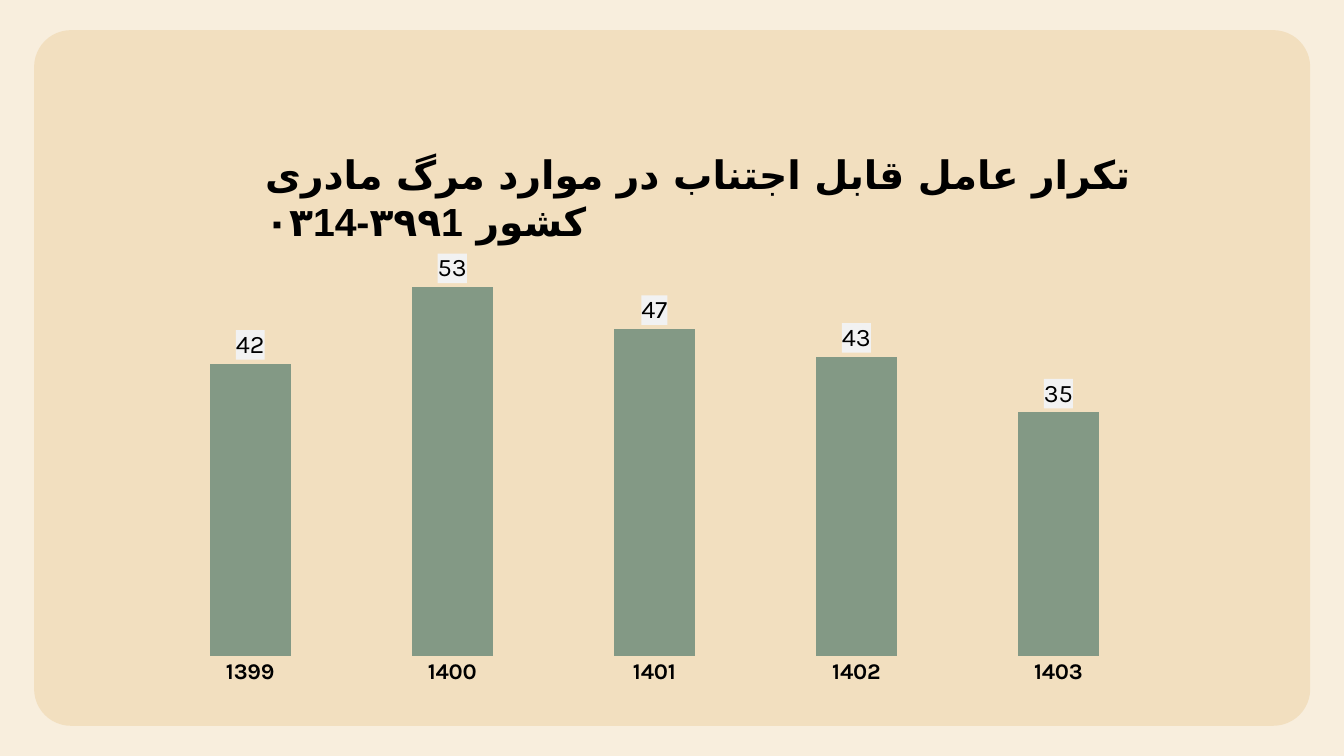
from lxml import etree
from pptx import Presentation
from pptx.chart.data import CategoryChartData
from pptx.dml.color import RGBColor
from pptx.enum.chart import XL_CHART_TYPE as ChartType, XL_LABEL_POSITION as LabelPos, XL_TICK_MARK as Tick
from pptx.enum.shapes import MSO_SHAPE as Shape
from pptx.enum.text import MSO_ANCHOR as Anchor, MSO_AUTO_SIZE as AutoSize, PP_ALIGN as Align
from pptx.oxml import parse_xml
from pptx.oxml.ns import nsdecls, qn
from pptx.util import Cm, Pt


def rgb(value):
    return RGBColor.from_string(value)


def style(font, name, size, bold):
    font.name = name
    font.size = Pt(size)
    font.bold = bold
    font.color.rgb = rgb("000000")


prs = Presentation()
prs.slide_width = Cm(33.87)
prs.slide_height = Cm(19.05)
s = prs.slides.add_slide(prs.slide_layouts[5])
s.background.fill.solid()
s.background.fill.fore_color.rgb = rgb("F8EEDD")

panel = s.shapes.add_shape(Shape.ROUNDED_RECTANGLE, Cm(0.86), Cm(0.76), Cm(32.16), Cm(17.53))
panel.adjustments[0] = 0.053
panel.shadow.inherit = False
panel.fill.solid()
panel.fill.fore_color.rgb = rgb("F2DFBF")
panel.line.fill.background()
s.shapes._spTree.insert(2, panel._element)

title = s.shapes.title
title.left, title.top, title.width, title.height = Cm(6.43), Cm(3.66), Cm(23.72), Cm(1.45)
tf = title.text_frame
tf.word_wrap = True
tf.auto_size = AutoSize.SHAPE_TO_FIT_TEXT
tf.vertical_anchor = Anchor.TOP
p = tf.paragraphs[0]
p.alignment = Align.LEFT
for text, script_font in [
    ("تکرار عامل قابل اجتناب در موارد مرگ مادری کشور ", "DejaVu Sans"),
    ("1", "Arial"),
    ("۳۹۹", "DejaVu Sans"),
    ("-14", "Arial"),
    ("۰۳", "DejaVu Sans"),
]:
    r = p.add_run()
    r.text = text
    style(r.font, "Calibri", 28, True)
    etree.SubElement(r.font._element, qn("a:cs")).set("typeface", script_font)

data = CategoryChartData()
data.categories = ["1399", "1400", "1401", "1402", "1403"]
data.add_series("Series 1", [42, 53, 47, 43, 35])
chart = s.shapes.add_chart(
    ChartType.COLUMN_CLUSTERED, Cm(3.23), Cm(5.77), Cm(26.52), Cm(11.76), data
).chart
style(chart.font, "Karla", 10, False)
chart.has_title = False
chart.has_legend = False

cat_axis = chart.category_axis
cat_axis.major_tick_mark = Tick.NONE
cat_axis.format.line.fill.background()
style(cat_axis.tick_labels.font, "Karla", 16, True)

val_axis = chart.value_axis
val_axis.minimum_scale = 0
val_axis.maximum_scale = 60
val_axis.has_major_gridlines = False
val_axis.visible = False

plot = chart.plots[0]
plot.gap_width = 150
plot.vary_by_categories = False
series = plot.series[0]
series.format.fill.solid()
series.format.fill.fore_color.rgb = rgb("839985")

labels = series.data_labels
labels.show_value = True
labels.position = LabelPos.OUTSIDE_END
style(labels.font, "Karla", 18, False)
label_fill = parse_xml(
    f'<c:spPr {nsdecls("c", "a")}><a:solidFill><a:srgbClr val="F2F2F2"/></a:solidFill></c:spPr>'
)
labels._element.find(qn("c:txPr")).addprevious(label_fill)

plot_area = chart._chartSpace.chart.plotArea
for old in plot_area.findall(qn("c:layout")):
    plot_area.remove(old)
layout = etree.Element(qn("c:layout"))
manual = etree.SubElement(layout, qn("c:manualLayout"))
for tag, value in [
    ("layoutTarget", "inner"), ("xMode", "edge"), ("yMode", "edge"),
    ("x", "0.02"), ("y", "0.02"), ("w", "0.96"), ("h", "0.895"),
]:
    etree.SubElement(manual, qn(f"c:{tag}")).set("val", value)
plot_area.insert(0, layout)

prs.save("out.pptx")
